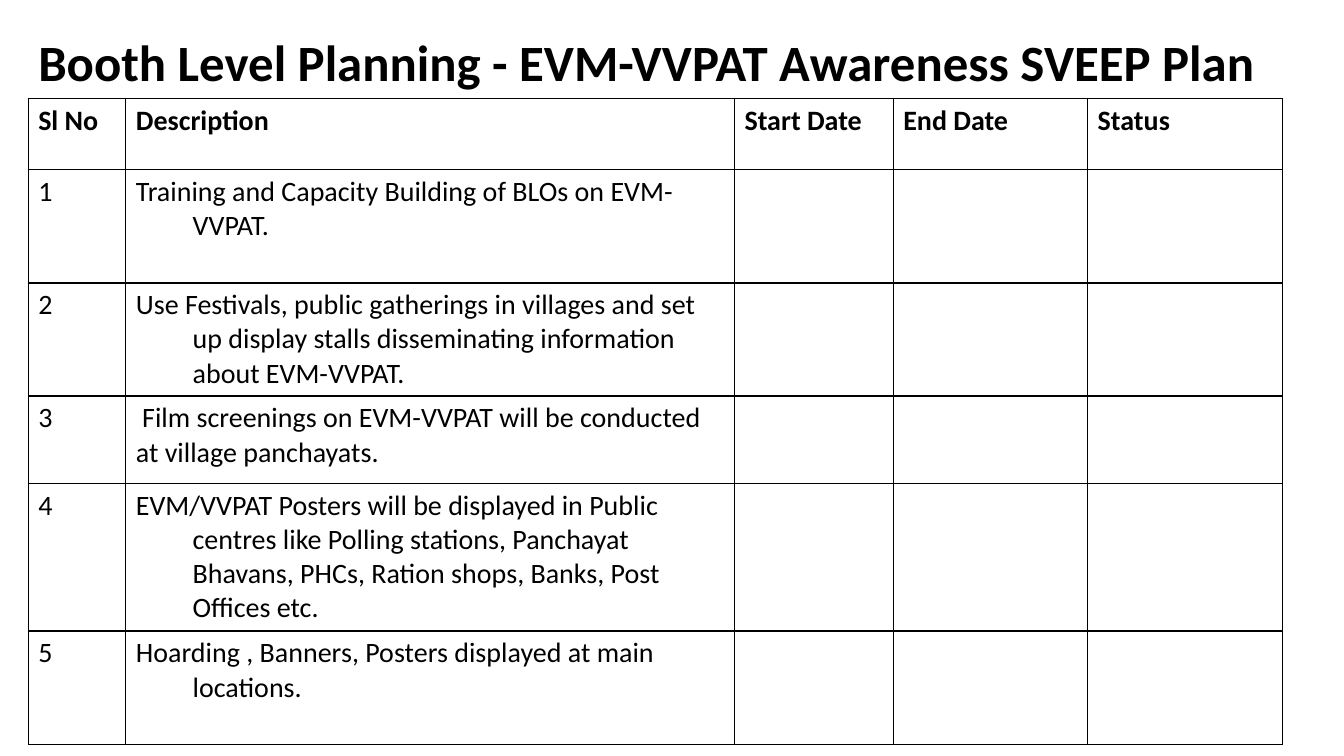
from dataclasses import dataclass

import lxml.etree
import pptx
import pptx.dml.color
import pptx.enum.text
import pptx.oxml.ns
import pptx.slide
import pptx.table
import pptx.text.text
import pptx.util
from pptx.util import Cm


@dataclass(frozen=True)
class Theme:
    font: str = "Calibri"
    ink: str = "000000"
    title_size: float = 36.3
    body_size: float = 20
    border_width: float = 1


@dataclass(frozen=True)
class Column:
    heading: str
    width: float


@dataclass(frozen=True)
class Activity:
    description: str
    height: float
    hanging: bool = True


THEME = Theme()
LEFT, WIDTH = Cm(0.71), Cm(31.6)
HEADER_HEIGHT = 1.8
HANGING_INDENT = Cm(1.43)

COLUMNS = [
    Column("Sl No", 2.46),
    Column("Description", 15.34),
    Column("Start Date", 4),
    Column("End Date", 4.9),
    Column("Status", 4.9),
]

ACTIVITIES = [
    Activity("Training and Capacity Building of BLOs on EVM-VVPAT.", 2.85),
    Activity("Use Festivals, public gatherings in villages and set up display stalls "
             "disseminating information about EVM-VVPAT.", 2.85),
    Activity(" Film screenings on EVM-VVPAT will be conducted at village panchayats.",
             2.2, hanging=False),
    Activity("EVM/VVPAT Posters will be displayed in Public centres like Polling "
             "stations, Panchayat Bhavans, PHCs, Ration shops, Banks, Post Offices etc.",
             3.72),
    Activity("Hoarding , Banners, Posters displayed at main locations.", 2.87),
]


def format_paragraph(para: pptx.text.text._Paragraph, size: float, bold: bool) -> None:
    para.alignment = pptx.enum.text.PP_ALIGN.LEFT
    for font in [para.font, *(span.font for span in para.runs)]:
        font.name = THEME.font
        font.size = pptx.util.Pt(size)
        font.bold = bold
        font.color.rgb = pptx.dml.color.RGBColor.from_string(THEME.ink)


def hang_paragraph(para: pptx.text.text._Paragraph) -> None:
    properties = para._p.get_or_add_pPr()
    properties.set("marL", str(HANGING_INDENT))
    properties.set("indent", str(-HANGING_INDENT))


def draw_borders(cell: pptx.table._Cell) -> None:
    qn = pptx.oxml.ns.qn
    properties = cell._tc.get_or_add_tcPr()
    for side in ("lnL", "lnR", "lnT", "lnB"):
        line = lxml.etree.SubElement(properties, qn(f"a:{side}"))
        line.set("w", str(pptx.util.Pt(THEME.border_width)))
        fill = lxml.etree.SubElement(line, qn("a:solidFill"))
        lxml.etree.SubElement(fill, qn("a:srgbClr")).set("val", THEME.ink)


def fill_cell(cell: pptx.table._Cell, text: str, bold: bool, hanging: bool) -> None:
    draw_borders(cell)
    cell.fill.background()
    cell.text_frame.text = text
    para = cell.text_frame.paragraphs[0]
    format_paragraph(para, THEME.body_size, bold)
    if hanging:
        hang_paragraph(para)


def add_title(page: pptx.slide.Slide, text: str) -> None:
    title = page.shapes.title
    title.left, title.top, title.width, title.height = LEFT, Cm(0.64), WIDTH, Cm(1.47)
    frame = title.text_frame
    frame.text = text
    frame.word_wrap = True
    frame.auto_size = pptx.enum.text.MSO_AUTO_SIZE.NONE
    frame.vertical_anchor = pptx.enum.text.MSO_ANCHOR.TOP
    format_paragraph(frame.paragraphs[0], THEME.title_size, True)


def add_plan(page: pptx.slide.Slide) -> None:
    heights = [HEADER_HEIGHT, *(activity.height for activity in ACTIVITIES)]
    table = page.shapes.add_table(
        len(heights), len(COLUMNS), LEFT, Cm(2.48), WIDTH, Cm(sum(heights))
    ).table
    table.first_row = False
    table.horz_banding = False
    for index, column in enumerate(COLUMNS):
        table.columns[index].width = Cm(column.width)
        fill_cell(table.cell(0, index), column.heading, bold=True, hanging=False)
    for index, height in enumerate(heights):
        table.rows[index].height = Cm(height)
    for number, activity in enumerate(ACTIVITIES, start=1):
        texts = [str(number), activity.description, "", "", ""]
        for index, text in enumerate(texts):
            hanging = index == 1 and activity.hanging
            fill_cell(table.cell(number, index), text, bold=False, hanging=hanging)


def main() -> None:
    deck = pptx.Presentation()
    deck.slide_width, deck.slide_height = Cm(33.87), Cm(19.05)
    page = deck.slides.add_slide(deck.slide_layouts.get_by_name("Title Only"))
    add_title(page, "Booth Level Planning - EVM-VVPAT Awareness SVEEP Plan")
    add_plan(page)
    deck.save("out.pptx")


if __name__ == "__main__":
    main()
